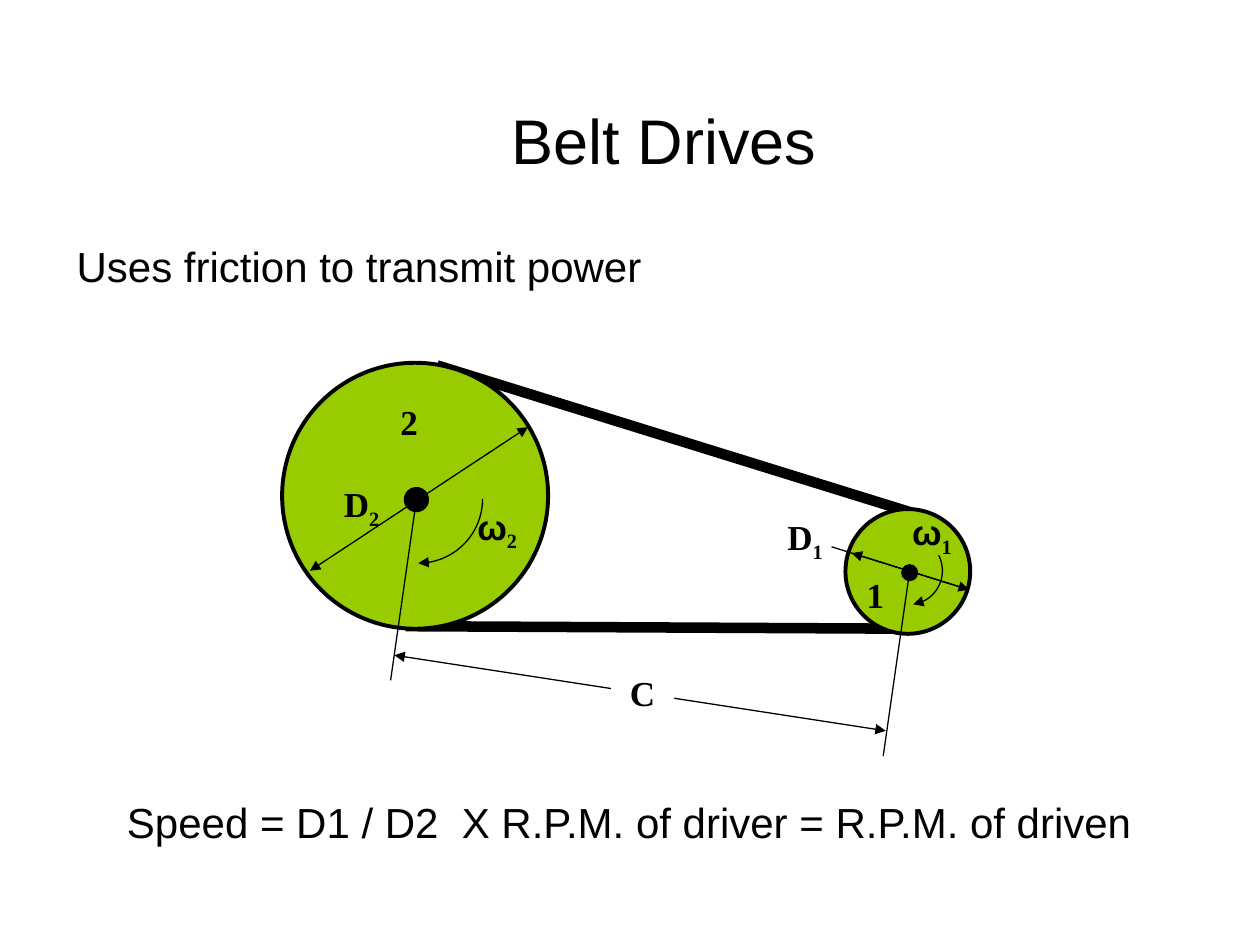
import math

import pptx
import pptx.dml.color
import pptx.enum.shapes
import pptx.enum.text
import pptx.oxml
import pptx.oxml.ns
import pptx.util

Pt = pptx.util.Pt
BLACK = pptx.dml.color.RGBColor(0x00, 0x00, 0x00)
WHITE = pptx.dml.color.RGBColor(0xFF, 0xFF, 0xFF)
PULLEY_GREEN = pptx.dml.color.RGBColor(0x99, 0xCC, 0x00)
SANS = "Arial"
SERIF = "Times New Roman"
CENTER = pptx.enum.text.PP_ALIGN.CENTER
SHAPE_TYPES = pptx.enum.shapes.MSO_SHAPE


def style_line(shape, width, head=False, tail=False):
    shape.line.color.rgb = BLACK
    shape.line.width = Pt(width)
    outline = shape.line._get_or_add_ln()
    for tag, wanted in (("a:headEnd", head), ("a:tailEnd", tail)):
        if wanted:
            arrowhead = pptx.oxml.parse_xml(
                f'<{tag} {pptx.oxml.ns.nsdecls("a")} type="triangle"/>')
            outline.append(arrowhead)


def add_line(slide, start, end, width=0.75, head=False, tail=False):
    line = slide.shapes.add_connector(
        pptx.enum.shapes.MSO_CONNECTOR.STRAIGHT,
        Pt(start[0]), Pt(start[1]), Pt(end[0]), Pt(end[1]))
    style_line(line, width, head, tail)
    line._element.spPr.append(
        pptx.oxml.parse_xml(f'<a:effectLst {pptx.oxml.ns.nsdecls("a")}/>'))


def add_circle(slide, center, diameter, color, line_width):
    circle = slide.shapes.add_shape(
        SHAPE_TYPES.OVAL,
        Pt(center[0] - diameter / 2), Pt(center[1] - diameter / 2),
        Pt(diameter), Pt(diameter))
    circle.shadow.inherit = False
    circle.fill.solid()
    circle.fill.fore_color.rgb = color
    style_line(circle, line_width)


def add_rotation_arrow(slide, center, radius, start_angle, end_angle, steps=24):
    points = []
    for step in range(steps + 1):
        angle = math.radians(start_angle + (end_angle - start_angle) * step / steps)
        points.append((Pt(center[0] + radius * math.cos(angle)),
                       Pt(center[1] + radius * math.sin(angle))))
    builder = slide.shapes.build_freeform(*points[0])
    builder.add_line_segments(points[1:], close=False)
    arrow = builder.convert_to_shape()
    arrow.shadow.inherit = False
    arrow.fill.background()
    style_line(arrow, 0.75, tail=True)


def format_run(run, size, font_name, bold=False):
    run.font.size = Pt(size)
    run.font.name = font_name
    run.font.bold = bold
    run.font.color.rgb = BLACK


def add_text(slide, text, left, top, width, height, size=20, font_name=SERIF,
             bold=True, subscript=None):
    box = slide.shapes.add_textbox(Pt(left), Pt(top), Pt(width), Pt(height))
    box.text_frame.word_wrap = True
    paragraph = box.text_frame.paragraphs[0]
    paragraph.text = text
    format_run(paragraph.runs[0], size, font_name, bold)
    if subscript:
        run = paragraph.add_run()
        run.text = subscript
        format_run(run, size, SERIF, bold)
        run.font._element.set("baseline", "-25000")
    return box


def add_distance_label(slide):
    label = slide.shapes.add_shape(
        SHAPE_TYPES.RECTANGLE, Pt(349.2), Pt(380.16), Pt(36), Pt(28.8))
    label.shadow.inherit = False
    label.fill.solid()
    label.fill.fore_color.rgb = WHITE
    label.line.fill.background()
    label.text_frame.vertical_anchor = pptx.enum.text.MSO_ANCHOR.TOP
    paragraph = label.text_frame.paragraphs[0]
    paragraph.text = "C"
    paragraph.alignment = CENTER
    format_run(paragraph.runs[0], 20, SERIF, bold=True)


def add_belt_drive(slide):
    add_line(slide, (231.84, 357.84), (519.12, 359.28), width=6)
    add_line(slide, (249.84, 208.8), (521.28, 293.04), width=6)

    add_circle(slide, (237.24, 283.32), 152, PULLEY_GREEN, 2.25)
    add_circle(slide, (518.76, 326.52), 71.28, PULLEY_GREEN, 2.25)
    add_circle(slide, (237.96, 285.48), 13.68, BLACK, 0.75)
    add_circle(slide, (519.84, 327.24), 9, BLACK, 0.75)

    add_text(slide, "2", 221.76, 225.36, 29.52, 28.08)
    add_text(slide, "1", 488.16, 324, 29.52, 28.08)

    add_rotation_arrow(slide, (239.04, 285.12), 36.72, 0, 90)
    add_rotation_arrow(slide, (519.12, 326.16), 19.44, -27, 82)

    add_line(slide, (225.36, 374.4), (506.16, 417.6), head=True, tail=True)
    add_line(slide, (223.2, 388.8), (237.6, 288))
    add_line(slide, (504.72, 432), (519.12, 331.2))
    add_distance_label(slide)

    add_text(slide, "ω", 265.68, 285.12, 44.64, 32.4, font_name=SANS, subscript="2")
    add_text(slide, "ω", 514.08, 288, 44.64, 32.4, font_name=SANS, subscript="1")
    add_line(slide, (301.68, 244.08), (177.12, 326.16), head=True, tail=True)
    add_text(slide, "D", 189.36, 272.16, 39.6, 28.08, subscript="2")
    add_text(slide, "D", 442.8, 290.88, 39.6, 28.08, subscript="1")
    add_line(slide, (553.68, 336.96), (486.72, 316.08), head=True, tail=True)
    add_line(slide, (553.68, 336.96), (475.2, 312.48))


def main():
    presentation = pptx.Presentation()
    presentation.slide_width = Pt(720)
    presentation.slide_height = Pt(540)
    slide = presentation.slides.add_slide(presentation.slide_layouts[6])

    title = add_text(slide, "Belt Drives", 73.44, 34.56, 612, 90,
                     size=36, font_name=SANS, bold=False)
    title.text_frame.vertical_anchor = pptx.enum.text.MSO_ANCHOR.MIDDLE
    title.text_frame.paragraphs[0].alignment = CENTER
    add_text(slide, "Uses friction to transmit power", 36.72, 133.92, 345.6, 39.6,
             size=24, font_name=SANS, bold=False)
    add_belt_drive(slide)
    add_text(slide, "Speed = D1 / D2  X R.P.M. of driver = R.P.M. of driven",
             65.52, 451.44, 595.44, 36, size=24, font_name=SANS, bold=False)

    presentation.save("out.pptx")


if __name__ == "__main__":
    main()
